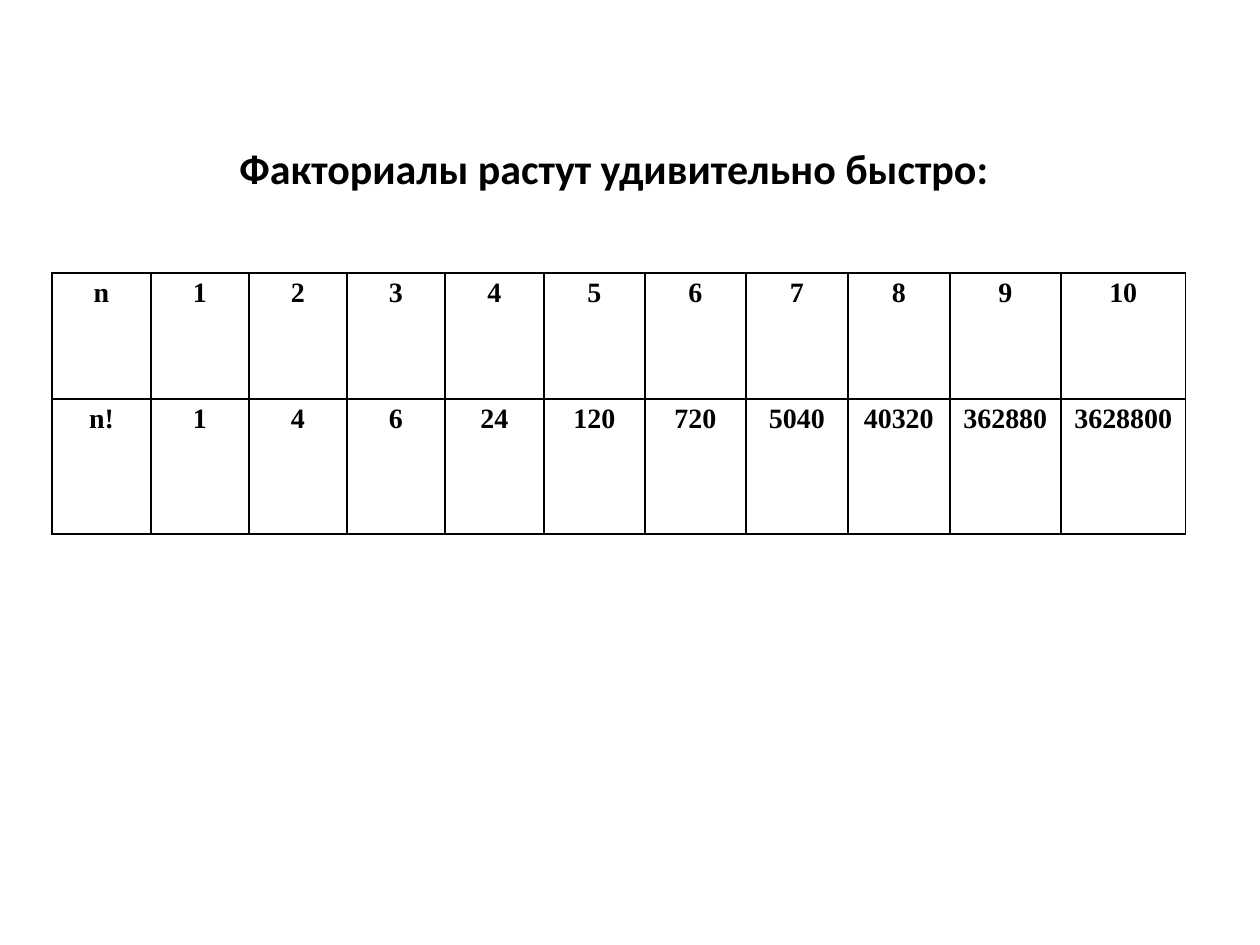
from dataclasses import dataclass

from lxml.etree import SubElement
from pptx import Presentation
from pptx.dml.color import RGBColor
from pptx.enum.text import MSO_ANCHOR, PP_ALIGN
from pptx.oxml.ns import qn
from pptx.util import Pt

TITLE = "Факториалы растут удивительно быстро:"
FACTORIAL_ROWS = [
    ["n", "1", "2", "3", "4", "5", "6", "7", "8", "9", "10"],
    ["n!", "1", "4", "6", "24", "120", "720", "5040", "40320", "362880", "3628800"],
]
COLUMN_WIDTHS = [99, 98, 98, 98, 99, 101, 101, 102, 102, 111, 125]
ROW_HEIGHTS = [126, 135]
SLIDE_SIZE = (1260, 945)
TITLE_BOX = (168, 136, 892, 63)
TABLE_ORIGIN = (52, 273)
CELL_SIDE_MARGIN = 9


@dataclass(frozen=True)
class Theme:
    ink: str = "000000"
    title_font: str = "Calibri"
    title_size: int = 24
    table_font: str = "Times New Roman"
    table_size: int = 16
    border_width: int = 1


THEME = Theme()


def px(length):
    return round(length * 914400 / 126)


def format_text(frame, font_name, size):
    para = frame.paragraphs[0]
    para.alignment = PP_ALIGN.CENTER
    font = para.runs[0].font
    font.name = font_name
    font.size = Pt(size)
    font.bold = True
    font.color.rgb = RGBColor.from_string(THEME.ink)
    return para


def add_borders(cell):
    properties = cell._tc.get_or_add_tcPr()
    for position, side in enumerate(("a:lnL", "a:lnR", "a:lnT", "a:lnB")):
        line = SubElement(properties, qn(side), w=str(Pt(THEME.border_width)))
        fill = SubElement(line, qn("a:solidFill"))
        SubElement(fill, qn("a:srgbClr"), val=THEME.ink)
        properties.insert(position, line)


def add_title(slide):
    title = slide.shapes.title
    title.left, title.top, title.width, title.height = map(px, TITLE_BOX)
    frame = title.text_frame
    frame.text = TITLE
    frame.word_wrap = True
    frame.vertical_anchor = MSO_ANCHOR.TOP
    format_text(frame, THEME.title_font, THEME.title_size)


def fill_cell(cell, text):
    cell.text = text
    cell.margin_left = cell.margin_right = px(CELL_SIDE_MARGIN)
    cell.margin_top = cell.margin_bottom = 0
    cell.fill.background()
    para = format_text(cell.text_frame, THEME.table_font, THEME.table_size)
    para.line_spacing = 1.15
    para.space_after = Pt(10)
    add_borders(cell)


def add_factorial_table(slide):
    bounds = (*TABLE_ORIGIN, sum(COLUMN_WIDTHS), sum(ROW_HEIGHTS))
    table = slide.shapes.add_table(
        len(ROW_HEIGHTS), len(COLUMN_WIDTHS), *map(px, bounds)
    ).table
    table.first_row = table.horz_banding = False
    for column, width in zip(table.columns, COLUMN_WIDTHS):
        column.width = px(width)
    for row, height, values in zip(table.rows, ROW_HEIGHTS, FACTORIAL_ROWS):
        row.height = px(height)
        for cell, value in zip(row.cells, values):
            fill_cell(cell, value)


def main():
    deck = Presentation()
    deck.slide_width, deck.slide_height = map(px, SLIDE_SIZE)
    slide = deck.slides.add_slide(deck.slide_layouts[5])
    add_title(slide)
    add_factorial_table(slide)
    deck.save("out.pptx")


if __name__ == "__main__":
    main()
